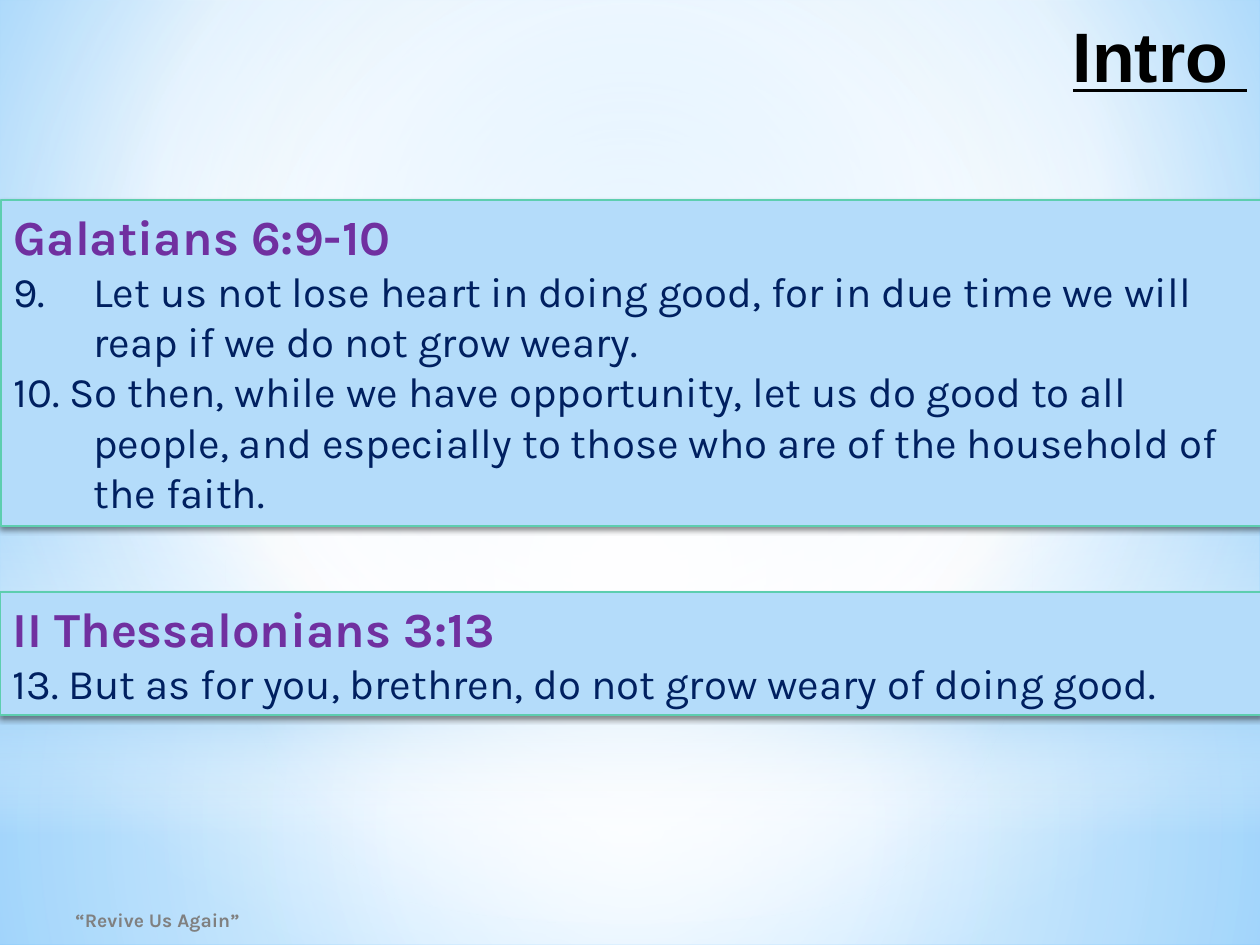
from lxml import etree
from pptx import Presentation
from pptx.dml.color import RGBColor
from pptx.enum.shapes import MSO_SHAPE
from pptx.enum.text import MSO_ANCHOR, PP_ALIGN
from pptx.oxml import parse_xml
from pptx.oxml.ns import nsdecls, qn
from pptx.util import Emu, Pt

PX = 914400 / 126
WIDTH, HEIGHT = 1260, 945
RECTANGLE, OVAL = MSO_SHAPE.RECTANGLE, MSO_SHAPE.OVAL
TOP, MIDDLE = MSO_ANCHOR.TOP, MSO_ANCHOR.MIDDLE
LEFT, RIGHT = PP_ALIGN.LEFT, PP_ALIGN.RIGHT
BLACK = RGBColor(0x00, 0x00, 0x00)
GRAY = RGBColor(0x80, 0x80, 0x80)
PURPLE = RGBColor(0x70, 0x30, 0xA0)
NAVY = RGBColor(0x00, 0x20, 0x60)
WHITE = RGBColor(0xFF, 0xFF, 0xFF)
PALE_BLUE = RGBColor(0xB4, 0xDC, 0xFA)
SKY = RGBColor(0x9E, 0xD5, 0xFF)
DEEP_SKY = RGBColor(0x5B, 0xB9, 0xFF)
MINT = RGBColor(0x5D, 0xCE, 0xAF)

CENTER = '<a:path path="circle"><a:fillToRect l="50000" t="50000" r="50000" b="50000"/></a:path>'
UPPER = '<a:path path="circle"><a:fillToRect l="20000" t="10000" r="20000" b="60000"/></a:path>'
DOWN = '<a:lin ang="5400000" scaled="0"/>'

TITLE = {"size": Pt(40), "name": "Arial", "bold": True, "underline": True}
FOOTER = {"size": Pt(11), "name": "Karla", "bold": True}
HEADING = {"size": Pt(28), "name": "Karla", "bold": True}
VERSE = {"size": Pt(24), "name": "Karla", "bold": False}


def paint_gradient(holder, stops, direction):
    marks = "".join(
        f'<a:gs pos="{place * 1000}"><a:srgbClr val="{color}">'
        f'<a:alpha val="{opacity * 1000}"/></a:srgbClr></a:gs>'
        for place, color, opacity in stops
    )
    gradient = parse_xml(
        f'<a:gradFill {nsdecls("a")} rotWithShape="1"><a:gsLst>{marks}</a:gsLst>{direction}</a:gradFill>'
    )
    holder.replace(holder.find(qn("a:solidFill")), gradient)


def write(para, text, align, color, formats):
    para.alignment = align
    span = para.add_run()
    span.text = text
    span.font.color.rgb = color
    for key, value in formats.items():
        setattr(span.font, key, value)


deck = Presentation()
deck.slide_width, deck.slide_height = Emu(round(WIDTH * PX)), Emu(round(HEIGHT * PX))
page = deck.slides.add_slide(deck.slide_layouts[6])

page.background.fill.solid()
paint_gradient(
    page.element.find(".//" + qn("p:bgPr")),
    [(0, SKY, 100), (60, WHITE, 100), (100, DEEP_SKY, 100)],
    UPPER,
)

glows = [
    (RECTANGLE, 703, 242, [(0, WHITE, 91), (37, WHITE, 76), (100, PALE_BLUE, 79)], CENTER),
    (RECTANGLE, 0, 703, [(0, WHITE, 89), (48, WHITE, 62), (100, PALE_BLUE, 79)], CENTER),
    (RECTANGLE, 519, 315, [(0, WHITE, 0), (29, WHITE, 30), (45, PALE_BLUE, 40),
                           (55, WHITE, 26), (65, PALE_BLUE, 60), (100, WHITE, 0)], DOWN),
    (OVAL, 220, 703, [(0, WHITE, 100), (56, WHITE, 0)], CENTER),
]
for kind, top, height, stops, direction in glows:
    glow = page.shapes.add_shape(kind, 0, round(top * PX), deck.slide_width, round(height * PX))
    glow.shadow.inherit = False
    glow.line.fill.background()
    glow.fill.solid()
    paint_gradient(glow.element.spPr, stops, direction)

labels = [
    ("“Revive Us Again”", (63, 895, 462, 50), MIDDLE, 6, LEFT, GRAY, FOOTER),
    ("Intro ", (0, 0, WIDTH, 91), TOP, 13, RIGHT, BLACK, TITLE),
]
for text, place, anchor, inset, align, color, formats in labels:
    box = page.shapes.add_textbox(*[round(length * PX) for length in place])
    frame = box.text_frame
    frame.word_wrap = True
    frame.vertical_anchor = anchor
    frame.margin_top = round(inset * PX)
    write(frame.paragraphs[0], text, align, color, formats)

passages = [
    ((1, 200, 1261, 326), "Galatians 6:9-10", [
        "9.\tLet us not lose heart in doing good, for in due time we will reap if we do not grow weary.",
        "10. So then, while we have opportunity, let us do good to all people, "
        "and especially to those who are of the household of the faith.",
    ]),
    ((0, 592, 1261, 123), "II Thessalonians 3:13", [
        "13. But as for you, brethren, do not grow weary of doing good.",
    ]),
]
for place, heading, verses in passages:
    panel = page.shapes.add_shape(RECTANGLE, *[round(length * PX) for length in place])
    panel.fill.solid()
    panel.fill.fore_color.rgb = PALE_BLUE
    panel.line.color.rgb = MINT
    panel.line.width = Pt(0.75)
    panel.shadow.inherit = False
    effects = panel.element.spPr.find(qn("a:effectLst"))
    shadow = etree.SubElement(effects, qn("a:outerShdw"), blurRad=str(Pt(3.1)),
                              dist=str(Pt(1.8)), dir="5400000", rotWithShape="0")
    shade = etree.SubElement(shadow, qn("a:srgbClr"), val=str(BLACK))
    etree.SubElement(shade, qn("a:alpha"), val="45000")
    frame = panel.text_frame
    frame.word_wrap = True
    frame.vertical_anchor = TOP
    write(frame.paragraphs[0], heading, LEFT, PURPLE, HEADING)
    for verse in verses:
        para = frame.add_paragraph()
        hanging = round(80 * PX)
        para._p.get_or_add_pPr().set("marL", str(hanging))
        para._p.get_or_add_pPr().set("indent", str(-hanging))
        write(para, verse, LEFT, NAVY, VERSE)

deck.save("out.pptx")
